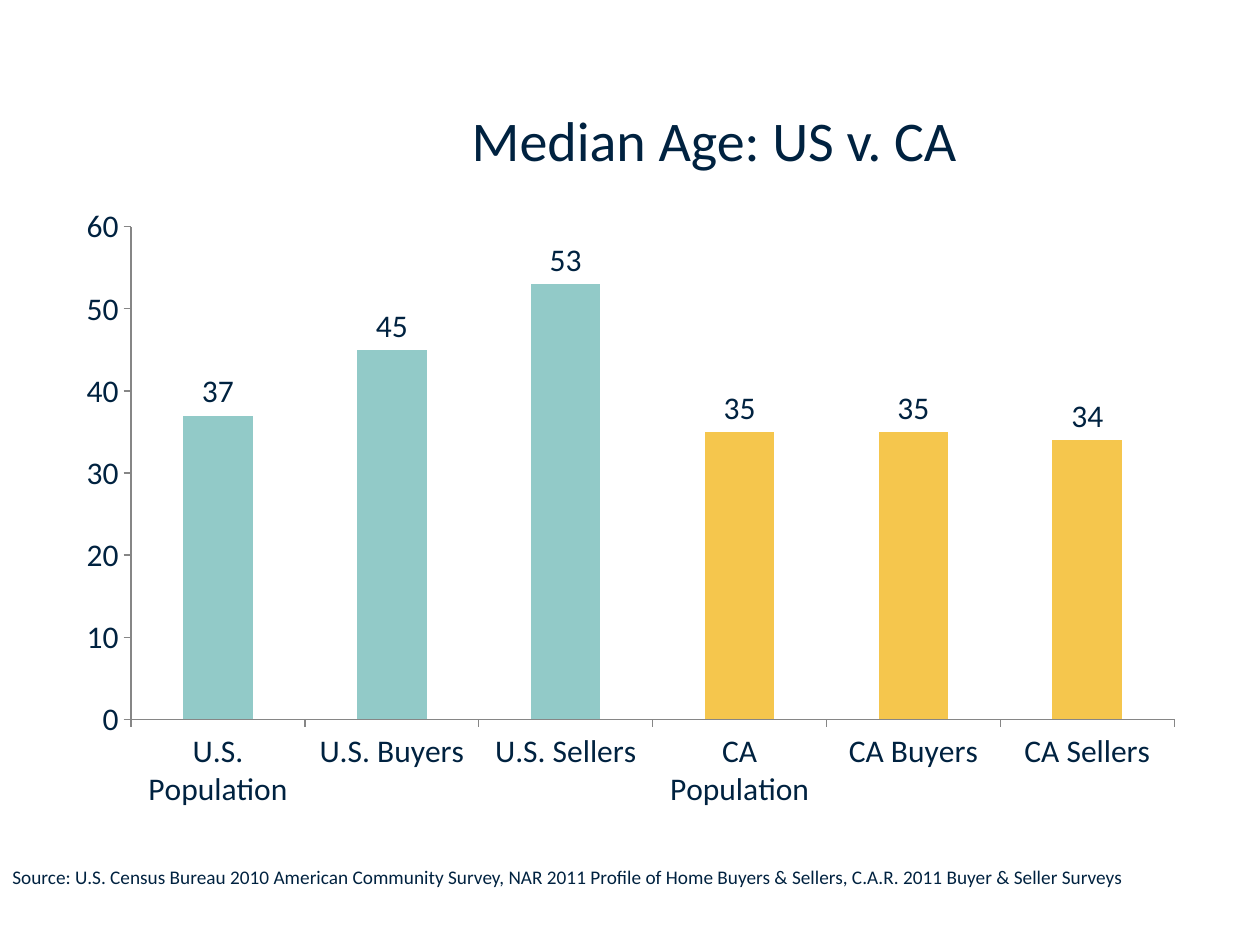
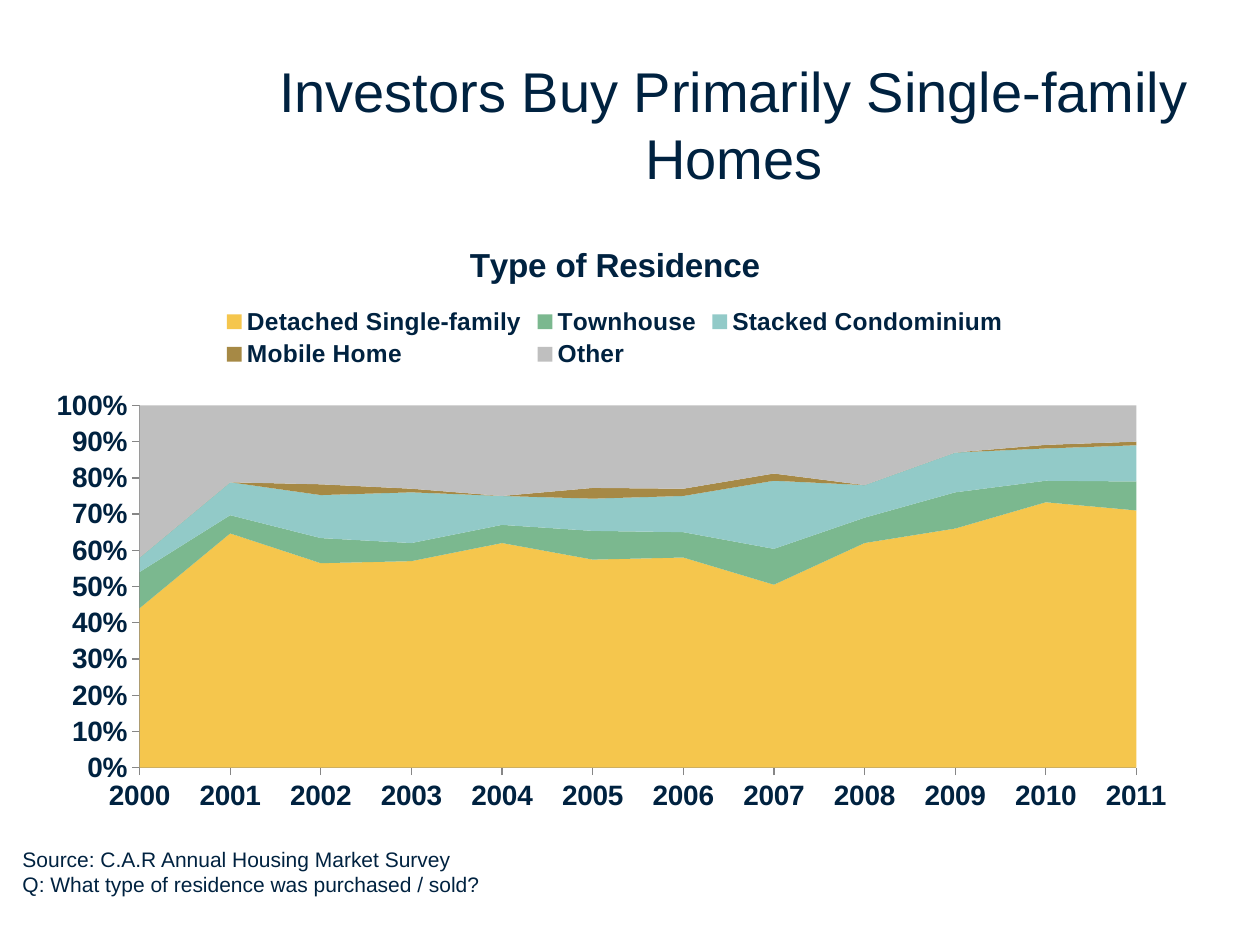
from lxml import etree
from pptx import Presentation
from pptx.chart.data import CategoryChartData
from pptx.dml.color import RGBColor
from pptx.enum.chart import XL_CHART_TYPE as CT, XL_LABEL_POSITION as LP
from pptx.enum.chart import XL_LEGEND_POSITION as LegendPos, XL_TICK_MARK as Tick
from pptx.enum.text import MSO_ANCHOR as Anchor, PP_ALIGN as Align
from pptx.oxml.ns import qn
from pptx.util import Inches, Pt

INK, AXIS = "002240", "868686"
GOLD, TEAL, GREEN, BROWN, GREY = "F5C64D", "92CAC8", "7BB88F", "A68945", "BFBFBF"

# PLACEHOLDER
SLIDES = [
    {
        "font": "Calibri",
        "title": ("Median Age: US v. CA", (18.4, 10.5, 76.6, 10.1)),
        "source": (["Source: U.S. Census Bureau 2010 American Community Survey, "
                    "NAR 2011 Profile of Home Buyers & Sellers, "
                    "C.A.R. 2011 Buyer & Seller Surveys"], (0, 90.9, 100, 4.4), 11),
        "chart": {
            "type": CT.COLUMN_CLUSTERED, "box": (5, 20.7, 90, 66),
            "plot": (0.06, 0.05, 0.92, 0.79), "size": 18, "bold": False,
            "cats": [f"{area} {group}" for area in ("U.S.", "CA")
                     for group in ("Population", "Buyers", "Sellers")],
            "series": [("Series 1", GOLD, [37, 45, 53, 35, 35, 34])],
            "points": {0: TEAL, 1: TEAL, 2: TEAL},
            "scale": (60, 10, "General"),
        },
    },
    {
        "font": "Arial",
        "title": ("Investors Buy Primarily Single-family Homes", (18.4, 5.3, 79.7, 10.1)),
        "source": (["Source: C.A.R Annual Housing Market Survey",
                    "Q: What type of residence was purchased / sold?"],
                   (0.8, 88.9, 62.5, 6.7), 12),
        "chart": {
            "type": CT.AREA_STACKED_100, "box": (2.8, 23.1, 92, 63.9),
            "plot": (0.09, 0.31, 0.86, 0.6), "size": 16, "bold": True,
            "title": ("Type of Residence", 19), "legend": 14,
            "cats": [str(year) for year in range(2000, 2012)],
            "series": [
                ("Detached Single-family", GOLD,
                 [44, 64, 57, 57, 62, 58, 58, 51, 62, 66, 74, 71]),
                ("Townhouse", GREEN, [10, 5, 7, 5, 5, 8, 7, 10, 7, 10, 6, 8]),
                ("Stacked Condominium", TEAL, [4, 9, 12, 14, 8, 9, 10, 19, 9, 11, 9, 10]),
                ("Mobile Home", BROWN, [0, 0, 3, 1, 0, 3, 2, 2, 0, 0, 1, 1]),
                ("Other", GREY, [42, 21, 22, 23, 25, 23, 23, 19, 22, 13, 11, 10]),
            ],
            "scale": (1, 0.1, "0%"),
        },
    },
]


def rgb(value):
    return RGBColor.from_string(value)


def place(box):
    x, y, w, h = (share / 100 for share in box)
    return (int(prs.slide_width * x), int(prs.slide_height * y),
            int(prs.slide_width * w), int(prs.slide_height * h))


def style(font, name, size, bold=False):
    font.name, font.size, font.bold = name, Pt(size), bold
    font.color.rgb = rgb(INK)


def add_text(s, lines, box, name, size, align=Align.LEFT):
    tf = s.shapes.add_textbox(*place(box)).text_frame
    tf.word_wrap, tf.vertical_anchor = True, Anchor.TOP
    tf.text = "\n".join(lines)
    for p in tf.paragraphs:
        p.alignment = align
        style(p.font, name, size)


def fix_plot(chart, shares):
    area = chart.element.find(".//" + qn("c:plotArea"))
    for old in area.findall(qn("c:layout")):
        area.remove(old)
    layout = etree.Element(qn("c:layout"))
    area.insert(0, layout)
    manual = etree.SubElement(layout, qn("c:manualLayout"))
    settings = [("layoutTarget", "inner"), ("xMode", "edge"), ("yMode", "edge")]
    for tag, value in settings + list(zip("xywh", shares)):
        etree.SubElement(manual, qn("c:" + tag)).set("val", str(value))


def style_axes(chart, top, step, number_format):
    for axis in (chart.category_axis, chart.value_axis):
        axis.has_major_gridlines = False
        axis.major_tick_mark, axis.minor_tick_mark = Tick.OUTSIDE, Tick.NONE
        axis.format.line.color.rgb = rgb(AXIS)
        axis.format.line.width = Pt(0.75)
    value = chart.value_axis
    value.minimum_scale, value.maximum_scale, value.major_unit = 0, top, step
    value.tick_labels.number_format = number_format
    value.tick_labels.number_format_is_linked = False


def add_chart(s, spec, name):
    data = CategoryChartData()
    data.categories = spec["cats"]
    for label, _, values in spec["series"]:
        data.add_series(label, values)
    chart = s.shapes.add_chart(spec["type"], *place(spec["box"]), data).chart
    style(chart.font, name, spec["size"], spec["bold"])
    style_axes(chart, *spec["scale"])
    fix_plot(chart, spec["plot"])

    plot = chart.plots[0]
    plot.vary_by_categories = False
    for series, (_, color, _) in zip(plot.series, spec["series"]):
        series.format.fill.solid()
        series.format.fill.fore_color.rgb = rgb(color)
    if spec["type"] == CT.COLUMN_CLUSTERED:
        plot.gap_width = 150
        for index, color in spec["points"].items():
            fill = plot.series[0].points[index].format.fill
            fill.solid()
            fill.fore_color.rgb = rgb(color)
        labels = plot.series[0].data_labels
        labels.show_value, labels.position = True, LP.OUTSIDE_END
    else:
        chart.element.find(".//" + qn("c:crossBetween")).set("val", "midCat")

    chart.has_title = "title" in spec
    if chart.has_title:
        text, size = spec["title"]
        tf = chart.chart_title.text_frame
        tf.text = text
        style(tf.paragraphs[0].font, name, size, True)
    chart.has_legend = "legend" in spec
    if chart.has_legend:
        chart.legend.position = LegendPos.TOP
        chart.legend.include_in_layout = False
        style(chart.legend.font, name, spec["legend"], True)


prs = Presentation()
prs.slide_width, prs.slide_height = Inches(10), Inches(7.5)
for content in SLIDES:
    s = prs.slides.add_slide(prs.slide_layouts[6])
    font = content["font"]
    title, box = content["title"]
    add_text(s, [title], box, font, 32, Align.CENTER)
    add_chart(s, content["chart"], font)
    lines, box, size = content["source"]
    add_text(s, lines, box, font, size)
prs.save("out.pptx")
